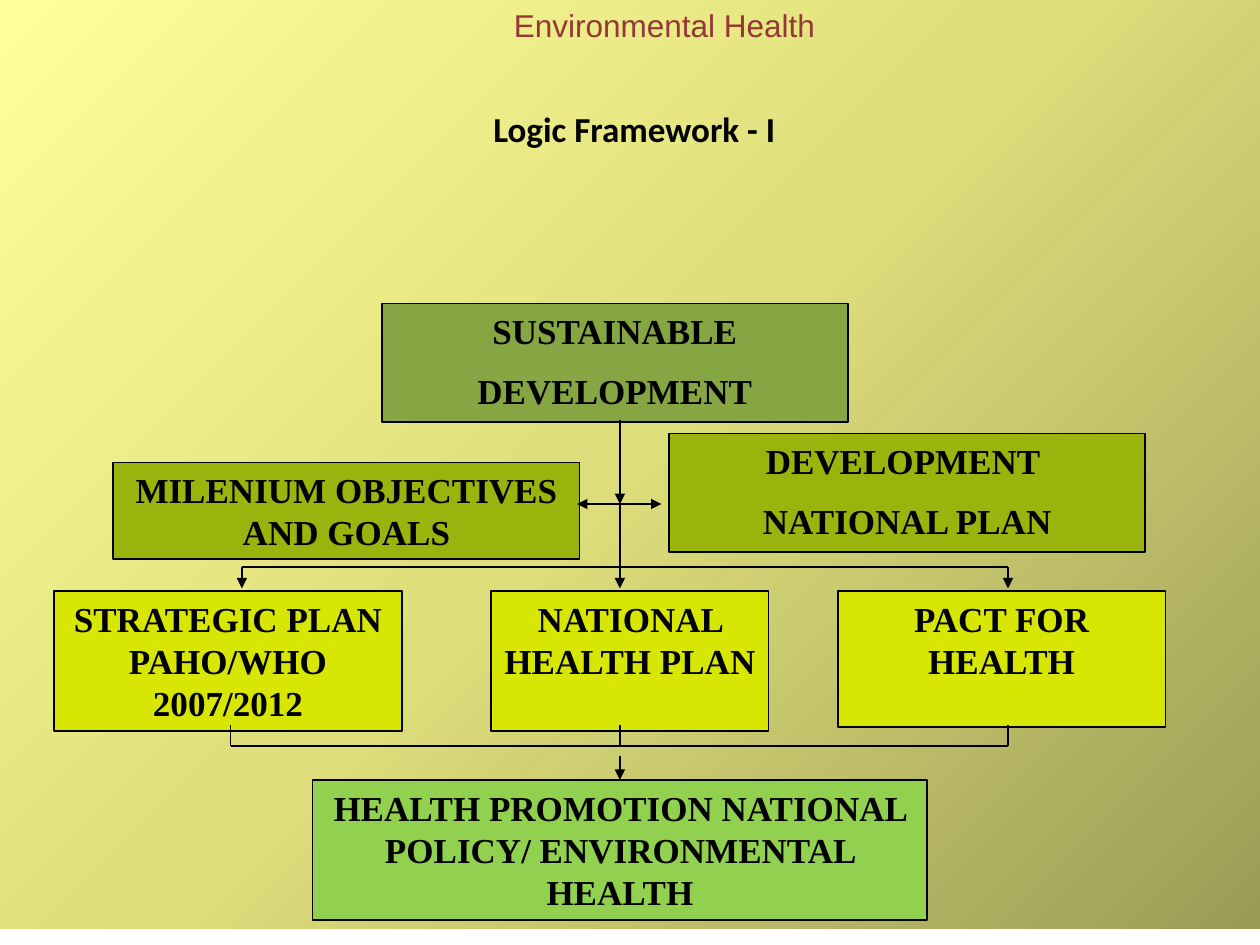
from copy import deepcopy
from dataclasses import dataclass

from pptx import Presentation
from pptx import util as u
from pptx.dml.color import RGBColor
from pptx.enum import shapes, text
from pptx.oxml import ns
from lxml import etree


@dataclass(frozen=True)
class Theme:
    ink: str = "000000"
    title: str = "953735"
    goal: str = "86A644"
    frame: str = "9BB30D"
    plan: str = "D7E703"
    policy: str = "92D050"
    wash: tuple = ((0, "9C9C56"), (0.5, "DDDD7B"), (1, "FFFF99"))
    head: int = 18
    body: int = 20
    edge: float = 1
    wire: float = 0.75
    gap: int = 10


class Board:
    def __init__(self, slide, theme):
        self.slide, self.theme = slide, theme

    def fit(self, frame, words, font, size, color, bold=False, center=True):
        """Put styled words into a text frame."""
        frame.word_wrap = True
        frame.vertical_anchor = text.MSO_ANCHOR.TOP
        frame.text = words
        for i, para in enumerate(frame.paragraphs):
            para.alignment = text.PP_ALIGN.CENTER if center else text.PP_ALIGN.LEFT
            if i:
                para.space_before = u.Pt(self.theme.gap)
            for run in para.runs:
                run.font.name, run.font.size = font, u.Pt(size)
                run.font.bold = bold
                run.font.color.rgb = RGBColor.from_string(color)

    def rect(self, *place):
        shape = self.slide.shapes.add_shape(
            shapes.MSO_SHAPE.RECTANGLE, *map(u.Inches, place))
        shape.shadow.inherit = False
        return shape

    def wash(self, *place):
        """Lay a diagonal gradient, lightest at the top left."""
        shape = self.rect(*place)
        shape.line.fill.background()
        fill = shape.fill
        fill.gradient()
        fill.gradient_angle = 135
        stops = shape._element.spPr.find(".//" + ns.qn("a:gsLst"))
        stops.append(deepcopy(stops[-1]))
        for stop, (pos, color) in zip(fill.gradient_stops, self.theme.wash):
            stop.position = pos
            stop.color.rgb = RGBColor.from_string(color)

    def box(self, words, color, *place):
        shape = self.rect(*place)
        shape.fill.solid()
        shape.fill.fore_color.rgb = RGBColor.from_string(color)
        shape.line.color.rgb = RGBColor.from_string(self.theme.ink)
        shape.line.width = u.Pt(self.theme.edge)
        frame = shape.text_frame
        frame.margin_left = frame.margin_right = u.Inches(0.08)
        self.fit(frame, words, "Times New Roman", self.theme.body,
                 self.theme.ink, bold=True)
        return shape

    def label(self, words, place, *style, **more):
        area = self.slide.shapes.add_textbox(*map(u.Inches, place))
        self.fit(area.text_frame, words, *style, **more)
        return area

    def wire(self, x1, y1, x2, y2, arrow=False):
        link = self.slide.shapes.add_connector(
            shapes.MSO_CONNECTOR.STRAIGHT, *map(u.Inches, (x1, y1, x2, y2)))
        link.line.color.rgb = RGBColor.from_string(self.theme.ink)
        link.line.width = u.Pt(self.theme.wire)
        props = link._element.spPr
        if arrow:
            etree.SubElement(props.find(ns.qn("a:ln")), ns.qn("a:tailEnd"),
                             type="triangle")
        etree.SubElement(props, ns.qn("a:effectLst"))
        return link


def main():
    deck = Presentation()
    deck.slide_width, deck.slide_height = u.Inches(10), u.Inches(7.5)
    theme = Theme()
    board = Board(deck.slides.add_slide(deck.slide_layouts[6]), theme)

    board.wash(0, 0, 10, 7.37)
    area = board.label("Logic Framework - I", (0.27, 0.84, 9.53, 4.93),
                       "Calibri", theme.body, theme.ink, bold=True)
    area.text_frame.paragraphs[0].line_spacing = 0.9

    board.box("SUSTAINABLE\nDEVELOPMENT", theme.goal, 3.03, 2.41, 3.7, 0.94)
    board.box("MILENIUM OBJECTIVES AND GOALS", theme.frame, 0.9, 3.67, 3.7, 0.77)
    board.box("DEVELOPMENT \nNATIONAL PLAN", theme.frame, 5.31, 3.44, 3.78, 0.94)
    for words, left, width, height in (
            ("STRATEGIC PLAN PAHO/WHO 2007/2012", 0.43, 2.76, 1.11),
            ("NATIONAL HEALTH PLAN", 3.9, 2.2, 1.11),
            ("PACT FOR HEALTH", 6.65, 2.6, 1.08)):
        board.box(words, theme.plan, left, 4.69, width, height)
    policy = board.box("HEALTH PROMOTION NATIONAL POLICY/ ENVIRONMENTAL HEALTH",
                       theme.policy, 2.48, 6.19, 4.88, 1.11)

    # Trunk with a branch to each side, then a rail above and below the plans
    mid, right, fork, rail, base = 4.92, 8, 4, 4.5, 5.92
    board.wire(mid, 3.33, mid, fork, arrow=True)
    for x in (4.58, 5.25):
        board.wire(mid, fork, x, fork, arrow=True)
    board.wire(mid, fork, mid, rail)
    board.wire(1.92, rail, right, rail)
    for x in (1.92, mid, right):
        board.wire(x, rail, x, 4.67, arrow=True)
    board.wire(1.83, base, right, base)
    for x in (1.83, mid, right):
        board.wire(x, 5.75, x, base)
    board.wire(mid, 6, mid, 6.19, arrow=True).end_connect(policy, 0)

    board.label("Environmental Health", (3.98, 0, 6.02, 0.4),
                "Arial", theme.head, theme.title, center=False)
    deck.save("out.pptx")


if __name__ == "__main__":
    main()
